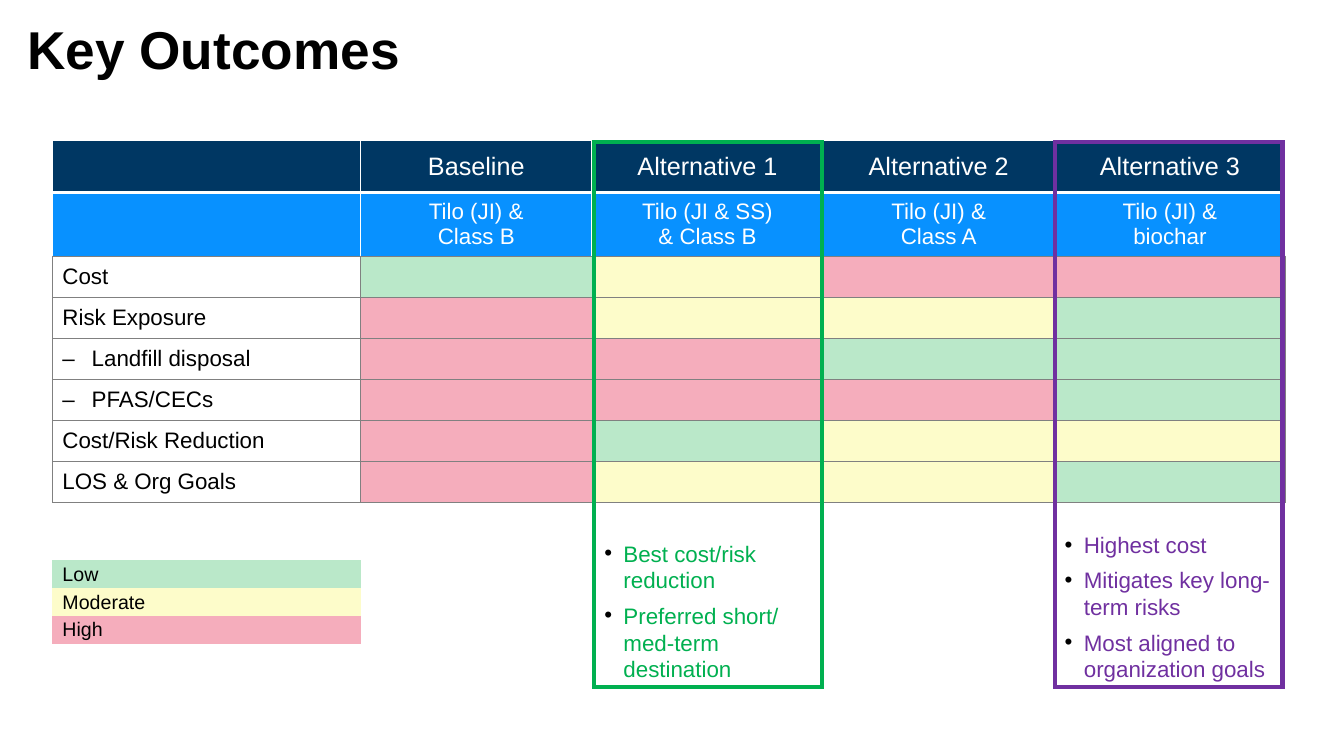
from lxml.etree import SubElement
from pptx import Presentation
from pptx.dml.color import RGBColor
from pptx.enum.shapes import MSO_SHAPE as Preset
from pptx.enum.text import MSO_ANCHOR as Anchor, MSO_AUTO_SIZE as AutoSize, PP_ALIGN as Align
from pptx.oxml.ns import qn
from pptx.util import Inches, Pt

BLACK, WHITE, GRAY = "000000", "FFFFFF", "808080"
NAVY, BLUE, GREEN, PURPLE = "003763", "0891FF", "00B050", "7030A0"
RATING = {"L": "BAE8C9", "M": "FDFCCA", "H": "F5ADBC"}
LEGEND = {"Low": "L", "Moderate": "M", "High": "H"}
ALTERNATIVES = ["", "Baseline", "Alternative 1", "Alternative 2", "Alternative 3"]
DESCRIPTIONS = ["", "Tilo (JI) &\vClass B", "Tilo (JI & SS)\v& Class B",
                "Tilo (JI) &\vClass A", "Tilo (JI) &\vbiochar"]
CRITERIA = [
    ("Cost", "LMHH", False),
    ("Risk Exposure", "HMML", False),
    ("Landfill disposal", "HHLL", True),
    ("PFAS/CECs", "HHHL", True),
    ("Cost/Risk Reduction", "HLMM", False),
    ("LOS & Org Goals", "HMML", False),
]
COLUMN_WIDTHS = [3.06] + [2.295] * 4
ROW_HEIGHTS = [0.52, 0.63] + [0.407] * 6 + [0.58] + [0.275] * 3
NO_GRID = "{2D5ABB26-0587-4C30-8999-92F81FD0307C}"
SIDES = "LRTB"
HEADER_EDGES = {"L": (WHITE, 1), "R": (WHITE, 1), "T": (WHITE, 1), "B": (WHITE, 3)}
DESCRIPTION_EDGES = {**HEADER_EDGES, "T": (WHITE, 3), "B": (GRAY, 0.5)}
GRID_EDGES = {side: (GRAY, 0.5) for side in SIDES}


def rgb(value):
    return RGBColor.from_string(value)


def apply(target, values):
    for key, value in values.items():
        setattr(target, key, value)


def style_text(paragraph, size, color, bold=False):
    for run in paragraph.runs:
        apply(run.font, {"name": "Arial", "size": Pt(size), "bold": bold})
        run.font.color.rgb = rgb(color)


def add_bullet(paragraph, mark, indent):
    props = paragraph._p.get_or_add_pPr()
    props.set("marL", str(Inches(indent)))
    props.set("indent", str(-Inches(indent)))
    bullet_color = SubElement(props, qn("a:buClr"))
    SubElement(bullet_color, qn("a:srgbClr"), val=BLACK)
    SubElement(props, qn("a:buFont"), typeface="Arial")
    SubElement(props, qn("a:buChar"), char=mark)


def add_edges(cell, edges):
    props = cell._tc.get_or_add_tcPr()
    for side in SIDES:
        color, width = edges.get(side, (None, 0))
        edge = SubElement(props, qn(f"a:ln{side}"), w=str(Pt(width)))
        if color:
            fill = SubElement(edge, qn("a:solidFill"))
            SubElement(fill, qn("a:srgbClr"), val=color)
        else:
            SubElement(edge, qn("a:noFill"))


def fill_cell(cell, text="", fill=None, edges=None, size=16, color=BLACK,
              align=Align.LEFT, dashed=False, pad=0.05):
    apply(cell, {"vertical_anchor": Anchor.MIDDLE, "margin_left": Inches(0.1),
                 "margin_top": Inches(pad), "margin_bottom": Inches(pad)})
    add_edges(cell, edges or {})
    if fill:
        cell.fill.solid()
        cell.fill.fore_color.rgb = rgb(fill)
    paragraph = cell.text_frame.paragraphs[0]
    paragraph.alignment = align
    if dashed:
        add_bullet(paragraph, "–", 0.29)
    if text:
        paragraph.text = text
        style_text(paragraph, size, color)
    else:
        SubElement(paragraph._p, qn("a:endParaRPr"), sz=str(size * 100))


def add_title(slide, left, top, width, height):
    title = slide.shapes.title
    apply(title, {"left": Inches(left), "top": Inches(top),
                  "width": Inches(width), "height": Inches(height)})
    frame = title.text_frame
    frame.text = "Key Outcomes"
    apply(frame, {"margin_left": 0, "margin_right": 0, "margin_top": 0, "margin_bottom": 0,
                  "vertical_anchor": Anchor.MIDDLE, "word_wrap": True,
                  "auto_size": AutoSize.NONE})
    apply(frame.paragraphs[0], {"alignment": Align.LEFT, "line_spacing": 0.9})
    style_text(frame.paragraphs[0], 38, BLACK, bold=True)


def add_outcomes(slide, left, top):
    table = slide.shapes.add_table(
        len(ROW_HEIGHTS), len(COLUMN_WIDTHS), Inches(left), Inches(top),
        Inches(sum(COLUMN_WIDTHS)), Inches(sum(ROW_HEIGHTS))).table
    apply(table, {"first_row": False, "horz_banding": False})
    table._tbl.tblPr.find(qn("a:tableStyleId")).text = NO_GRID
    for column, width in zip(table.columns, COLUMN_WIDTHS):
        column.width = Inches(width)
    for row, height in zip(table.rows, ROW_HEIGHTS):
        row.height = Inches(height)

    for index, (alternative, description) in enumerate(zip(ALTERNATIVES, DESCRIPTIONS)):
        fill_cell(table.cell(0, index), alternative, NAVY, HEADER_EDGES,
                  18, WHITE, Align.CENTER)
        fill_cell(table.cell(1, index), description, BLUE, DESCRIPTION_EDGES,
                  16, WHITE, Align.CENTER)

    for row, (criterion, ratings, dashed) in enumerate(CRITERIA, 2):
        fill_cell(table.cell(row, 0), criterion, WHITE, GRID_EDGES, dashed=dashed)
        for column, rating in enumerate(ratings, 1):
            fill_cell(table.cell(row, column), fill=RATING[rating], edges=GRID_EDGES)

    gap_row = len(CRITERIA) + 2
    for column in range(len(COLUMN_WIDTHS)):
        fill_cell(table.cell(gap_row, column), edges={"T": (GRAY, 0.5)})
    for row, (label, rating) in enumerate(LEGEND.items(), gap_row + 1):
        fill_cell(table.cell(row, 0), label, RATING[rating], size=14, pad=0.02)
        for column in range(1, len(COLUMN_WIDTHS)):
            fill_cell(table.cell(row, column), size=14, pad=0.02)


def add_highlight(slide, left, top, width, height, color, points):
    highlight = slide.shapes.add_shape(Preset.RECTANGLE, Inches(left), Inches(top),
                                       Inches(width), Inches(height))
    highlight.shadow.inherit = False
    highlight.fill.background()
    highlight.line.color.rgb = rgb(color)
    highlight.line.width = Pt(3)
    SubElement(highlight.line._get_or_add_ln(), qn("a:miter"), lim="800000")
    frame = highlight.text_frame
    apply(frame, {"word_wrap": True, "vertical_anchor": Anchor.BOTTOM})
    for index, point in enumerate(points):
        paragraph = frame.add_paragraph() if index else frame.paragraphs[0]
        add_bullet(paragraph, "•", 0.19)
        paragraph.text = point
        apply(paragraph, {"alignment": Align.LEFT, "space_after": Pt(3)})
        if index:
            paragraph.space_before = Pt(3)
        style_text(paragraph, 16, color)


def main():
    deck = Presentation()
    apply(deck, {"slide_width": Inches(13.34), "slide_height": Inches(7.5)})
    slide = deck.slides.add_slide(deck.slide_layouts[5])
    add_title(slide, 0.27, 0.23, 12.8, 0.58)
    add_outcomes(slide, 0.52, 1.39)
    add_highlight(slide, 5.9, 1.41, 2.26, 5.41, GREEN,
                  ["Best cost/risk reduction", "Preferred short/ med-term destination"])
    add_highlight(slide, 10.47, 1.41, 2.26, 5.41, PURPLE,
                  ["Highest cost", "Mitigates key long-term risks",
                   "Most aligned to organization goals"])
    deck.save("out.pptx")


if __name__ == "__main__":
    main()
